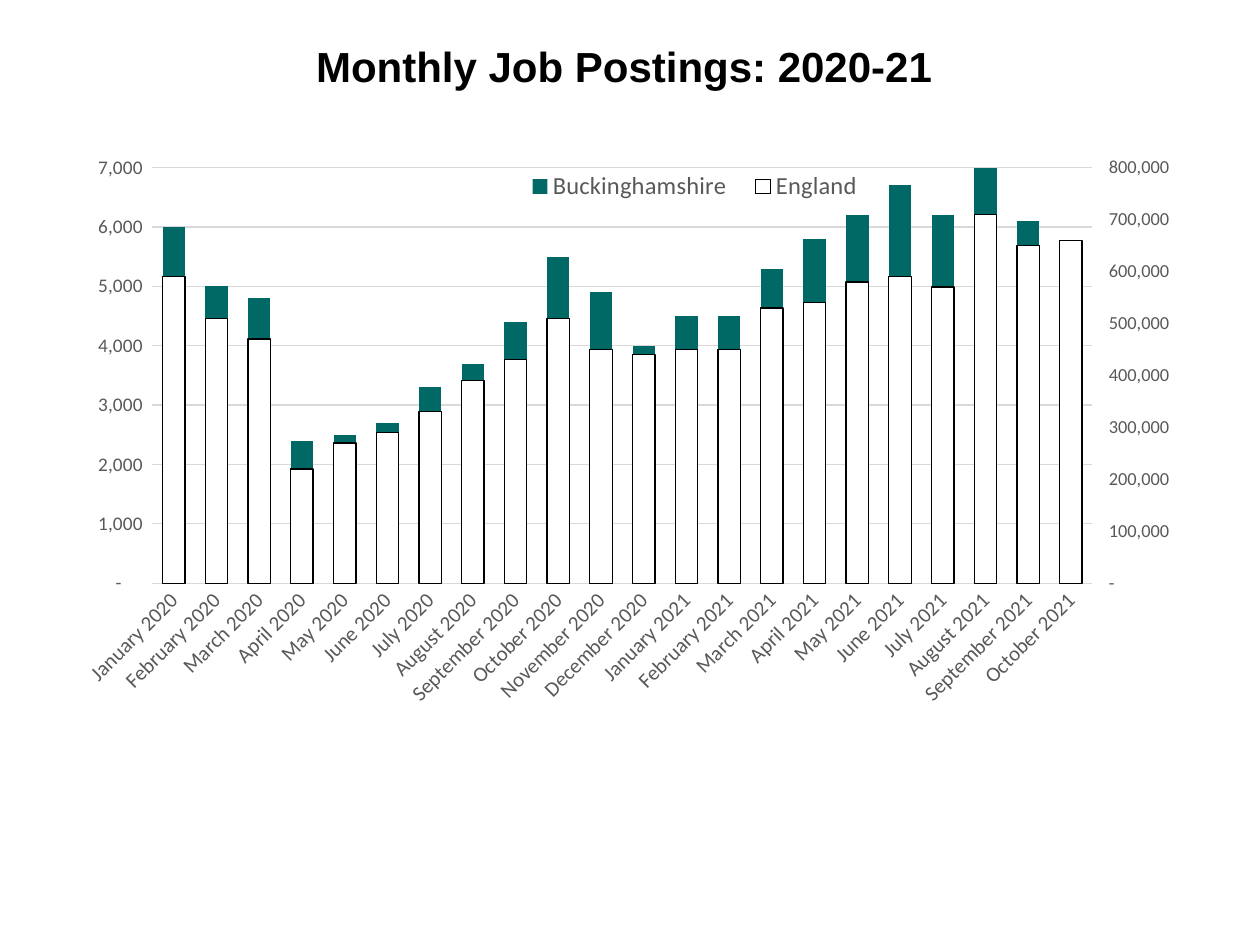
from copy import deepcopy

from pptx import Presentation
from pptx.chart.axis import CategoryAxis, ValueAxis
from pptx.chart.data import CategoryChartData
from pptx.dml.color import RGBColor
from pptx.enum.chart import XL_CHART_TYPE, XL_LEGEND_POSITION, XL_TICK_MARK
from pptx.enum.text import MSO_ANCHOR, PP_ALIGN
from pptx.oxml import parse_xml
from pptx.oxml.ns import nsdecls, qn
from pptx.util import Inches, Pt

CLUSTERED = XL_CHART_TYPE.COLUMN_CLUSTERED
BOTTOM = XL_LEGEND_POSITION.BOTTOM
NO_TICK, TICK_OUT = XL_TICK_MARK.NONE, XL_TICK_MARK.OUTSIDE
CENTER, MIDDLE = PP_ALIGN.CENTER, MSO_ANCHOR.MIDDLE

GREY, PALE, TEAL, WHITE, BLACK = "595959", "D9D9D9", "006965", "FFFFFF", "000000"
CHART_WIDTH, CHART_HEIGHT = Inches(9), Inches(4.95)
NUMBER_FORMAT = '_-* #,##0_-;\\-* #,##0_-;_-* "-"??_-;_-@_'
MONTHS = ["January", "February", "March", "April", "May", "June", "July",
          "August", "September", "October", "November", "December"]
BUCKINGHAMSHIRE = [6000, 5000, 4800, 2400, 2500, 2700, 3300, 3700, 4400, 5500, 4900,
                   4000, 4500, 4500, 5300, 5800, 6200, 6700, 6200, 7500, 6100, 5700]
ENGLAND_THOUSANDS = [590, 510, 470, 220, 270, 290, 330, 390, 430, 510, 450,
                     440, 450, 450, 530, 540, 580, 590, 570, 710, 650, 660]


def style_font(font, size, color, name="Calibri"):
    font.size = Pt(size)
    font.name = name
    font.color.rgb = RGBColor.from_string(color)


def manual_layout(left, top, width, height, inner=False):
    """Chart layout element from lengths in inches within the chart."""
    x, w = Inches(left) / CHART_WIDTH, Inches(width) / CHART_WIDTH
    y, h = Inches(top) / CHART_HEIGHT, Inches(height) / CHART_HEIGHT
    target = '<c:layoutTarget val="inner"/>' if inner else ""
    return parse_xml(
        f'<c:layout {nsdecls("c")}><c:manualLayout>{target}'
        '<c:xMode val="edge"/><c:yMode val="edge"/>'
        f'<c:x val="{x}"/><c:y val="{y}"/><c:w val="{w}"/><c:h val="{h}"/>'
        '</c:manualLayout></c:layout>')


prs = Presentation()
prs.slide_width, prs.slide_height = Inches(10), Inches(7.5)
slide = prs.slides.add_slide(prs.slide_layouts[5])

# Title
title = slide.shapes.title
title.left, title.top = Inches(0.5), Inches(-0.1)
title.width, title.height = Inches(9), Inches(1.25)
title.text_frame.text = "Monthly Job Postings: 2020-21 "
title.text_frame.vertical_anchor = MIDDLE
heading = title.text_frame.paragraphs[0]
heading.alignment = CENTER
style_font(heading.runs[0].font, 24, BLACK, "Arial")
heading.runs[0].font.bold = True

# Chart
data = CategoryChartData(number_format="#,##0")
data.categories = [f"{month} {year}" for year in (2020, 2021) for month in MONTHS][:22]
data.add_series("Buckinghamshire", BUCKINGHAMSHIRE)
data.add_series("England", [value * 1000 for value in ENGLAND_THOUSANDS])
chart = slide.shapes.add_chart(CLUSTERED, Inches(0.5), Inches(1.14),
                               CHART_WIDTH, CHART_HEIGHT, data).chart
style_font(chart.font, 10, BLACK)
chart.has_title = False

plot = chart.plots[0]
plot.gap_width = 91
plot.vary_by_categories = False
for series, color in zip(plot.series, (TEAL, WHITE)):
    series.invert_if_negative = False
    series.format.fill.solid()
    series.format.fill.fore_color.rgb = RGBColor.from_string(color)
england_line = plot.series[1].format.line
england_line.color.rgb = RGBColor.from_string(BLACK)
england_line.width = Pt(0.75)

month_axis = chart.category_axis
month_axis.major_tick_mark = NO_TICK
style_font(month_axis.tick_labels.font, 12, GREY)
month_axis._element.find(qn("c:txPr")).find(qn("a:bodyPr")).set("rot", "-2700000")

county_axis = chart.value_axis
county_axis.major_tick_mark = NO_TICK
county_axis.minimum_scale, county_axis.maximum_scale = 0, 7000
county_axis.major_unit = 1000
county_axis.format.line.fill.background()
county_axis.tick_labels.number_format = NUMBER_FORMAT
county_axis.tick_labels.number_format_is_linked = False
style_font(county_axis.tick_labels.font, 11, GREY)
for line in (month_axis.format.line, county_axis.major_gridlines.format.line):
    line.color.rgb = RGBColor.from_string(PALE)
    line.width = Pt(0.75)

# England moves to a second column group with its own axes
county_bars = plot._element
england_bars = deepcopy(county_bars)
county_bars.remove(county_bars.findall(qn("c:ser"))[1])
england_bars.remove(england_bars.findall(qn("c:ser"))[0])
county_bars.addnext(england_bars)
hidden_xml = deepcopy(month_axis._element)
right_xml = deepcopy(county_axis._element)
county_axis._element.addnext(right_xml)
right_xml.addnext(hidden_xml)
for references, ids in (
        (england_bars.findall(qn("c:axId")), ("5001", "5002")),
        ([hidden_xml.find(qn("c:axId")), hidden_xml.find(qn("c:crossAx"))], ("5001", "5002")),
        ([right_xml.find(qn("c:axId")), right_xml.find(qn("c:crossAx"))], ("5002", "5001"))):
    for reference, axis_id in zip(references, ids):
        reference.set("val", axis_id)
right_xml.find(qn("c:axPos")).set("val", "r")
right_xml.find(qn("c:crosses")).set("val", "max")

CategoryAxis(hidden_xml).visible = False
england_axis = ValueAxis(right_xml)
england_axis.has_major_gridlines = False
england_axis.major_tick_mark = TICK_OUT
england_axis.maximum_scale = 800000
england_axis.major_unit = 100000
style_font(england_axis.tick_labels.font, 10.5, GREY)

# Legend and plot positions
chart.has_legend = True
legend = chart.legend
legend.position = BOTTOM
legend.include_in_layout = False
style_font(legend.font, 14, GREY)
for parent, layout in (
        (legend._element, manual_layout(3.56, 0.19, 2.91, 0.3)),
        (county_bars.getparent(), manual_layout(0.71, 0.19, 7.46, 3.3, inner=True))):
    old_layout = parent.find(qn("c:layout"))
    if old_layout is not None:
        parent.remove(old_layout)
    if parent is legend._element:
        parent.find(qn("c:legendPos")).addnext(layout)
    else:
        parent.insert(0, layout)

prs.save("out.pptx")
